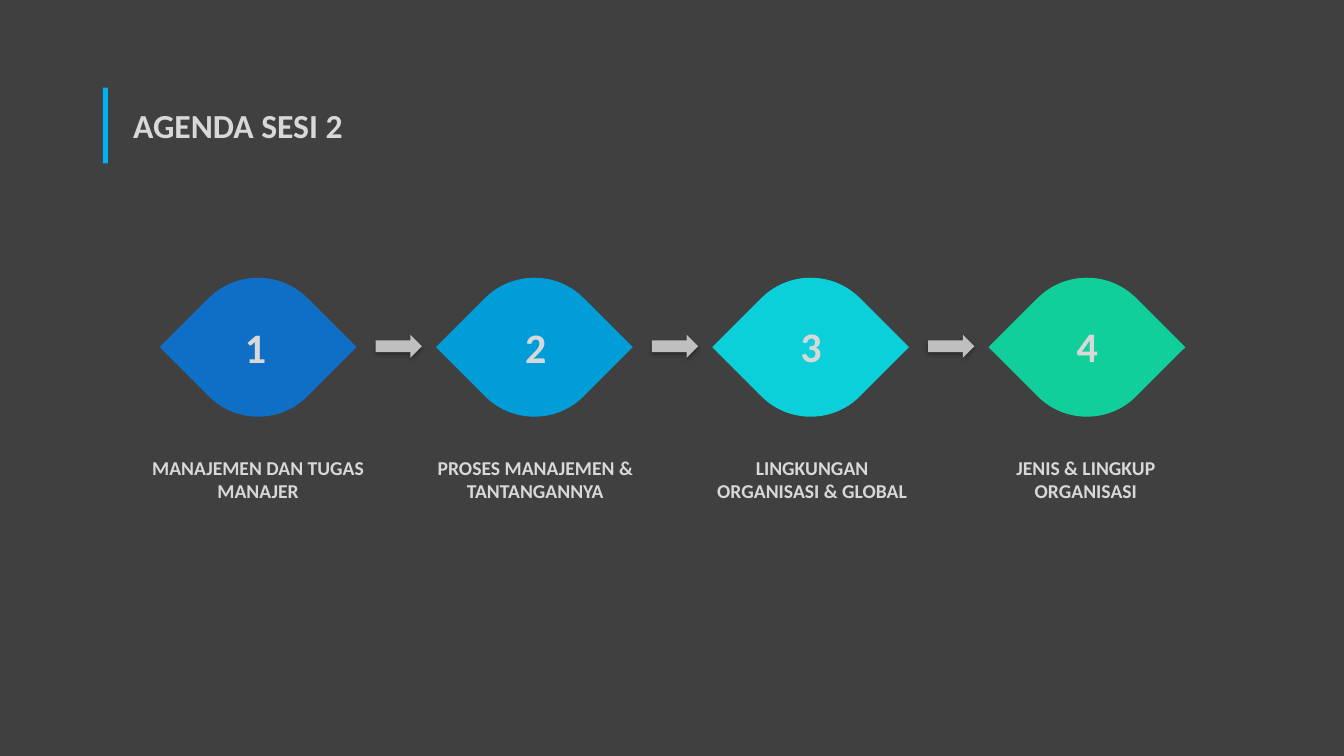
from dataclasses import dataclass
from math import sqrt

from lxml.etree import SubElement
from pptx import Presentation
from pptx.dml.color import RGBColor
from pptx.enum.shapes import MSO_SHAPE
from pptx.enum.text import MSO_ANCHOR, MSO_AUTO_SIZE, PP_ALIGN
from pptx.oxml.ns import qn
from pptx.util import Inches, Pt


@dataclass(frozen=True)
class Theme:
    font: str = "Calibri"
    background: str = "404040"
    text: str = "D8D8D8"
    accent: str = "00B0F0"
    arrow: str = "BFBFBF"
    shadow: str = "000000"
    title_size: int = 24
    number_size: int = 30
    label_size: int = 14


theme = Theme()


def paint(shape, color):
    shape.shadow.inherit = False
    shape.fill.solid()
    shape.fill.fore_color.rgb = RGBColor.from_string(color)
    shape.line.fill.background()


def write(shape, text, size, alignment=PP_ALIGN.LEFT):
    text_frame = shape.text_frame
    text_frame.text = text
    text_frame.word_wrap = True
    text_frame.auto_size = MSO_AUTO_SIZE.SHAPE_TO_FIT_TEXT
    text_frame.vertical_anchor = MSO_ANCHOR.TOP
    paragraph = text_frame.paragraphs[0]
    paragraph.alignment = alignment
    font = paragraph.runs[0].font
    font.name = theme.font
    font.size = Pt(size)
    font.bold = True
    font.color.rgb = RGBColor.from_string(theme.text)


presentation = Presentation()
presentation.slide_width = Inches(13.33)
presentation.slide_height = Inches(7.5)
slide = presentation.slides.add_slide(presentation.slide_layouts[5])
slide.background.fill.solid()
slide.background.fill.fore_color.rgb = RGBColor.from_string(theme.background)

title_bar = slide.shapes.add_shape(
    MSO_SHAPE.RECTANGLE, Inches(1.02), Inches(0.87), Inches(0.05), Inches(0.75)
)
paint(title_bar, theme.accent)

title = slide.shapes.title
title.left, title.top = Inches(1.22), Inches(0.99)
title.width, title.height = Inches(4.08), Inches(0.5)
write(title, "AGENDA SESI 2", theme.title_size)

topics = [
    ("MANAJEMEN DAN TUGAS MANAJER", "0F6FC6", 2.33, 3.14, 1.4, 2.32),
    ("PROSES MANAJEMEN & TANTANGANNYA", "009DD9", 5.11, 3.14, 4.15, 2.32),
    ("LINGKUNGAN ORGANISASI & GLOBAL", "0BD0D9", 7.84, 3.13, 6.9, 2.31),
    ("JENIS & LINGKUP ORGANISASI", "10CF9B", 10.58, 3.13, 9.63, 2.28),
]
first_center, pitch, center_y = 2.56, 2.74, 3.445
radius = 0.69
tip = radius * sqrt(2)
shoulder = tip / 2
handle = shoulder * 0.55
half_outline = [
    (tip, 0),
    (shoulder, -shoulder),
    (shoulder - handle, -shoulder - handle),
    (handle - shoulder, -shoulder - handle),
    (-shoulder, -shoulder),
]
leaf_outline = half_outline + [(-x, -y) for x, y in half_outline]

for index, (topic, color, number_left, number_top, label_left, label_width) in enumerate(topics):
    center_x = first_center + index * pitch
    points = [(Inches(center_x + x), Inches(center_y + y)) for x, y in leaf_outline]
    builder = slide.shapes.build_freeform(*points[0], scale=1.0)
    builder.add_line_segments(points[1:], close=True)
    leaf = builder.convert_to_shape()
    paint(leaf, color)
    segments = list(leaf.element.iter(qn("a:lnTo")))
    for arc in (segments[1:4], segments[6:9]):
        curve = arc[0].makeelement(qn("a:cubicBezTo"))
        arc[0].addprevious(curve)
        for segment in arc:
            curve.append(segment[0])
            segment.getparent().remove(segment)

    number = slide.shapes.add_textbox(
        Inches(number_left), Inches(number_top), Inches(0.46), Inches(0.61)
    )
    write(number, str(index + 1), theme.number_size)

    label = slide.shapes.add_textbox(
        Inches(label_left), Inches(4.47), Inches(label_width), Inches(0.57)
    )
    write(label, topic, theme.label_size, PP_ALIGN.CENTER)

    if index < len(topics) - 1:
        arrow = slide.shapes.add_shape(
            MSO_SHAPE.RIGHT_ARROW,
            Inches(center_x + 1.165), Inches(3.32), Inches(0.46), Inches(0.23),
        )
        paint(arrow, theme.arrow)
        effects = arrow.element.spPr.find(qn("a:effectLst"))
        shadow = SubElement(
            effects, qn("a:outerShdw"), blurRad=str(Pt(3.1)), dist=str(Pt(1.8)),
            dir="5400000", rotWithShape="0",
        )
        shadow_color = SubElement(shadow, qn("a:srgbClr"), val=theme.shadow)
        SubElement(shadow_color, qn("a:alpha"), val="35000")

presentation.save("out.pptx")
